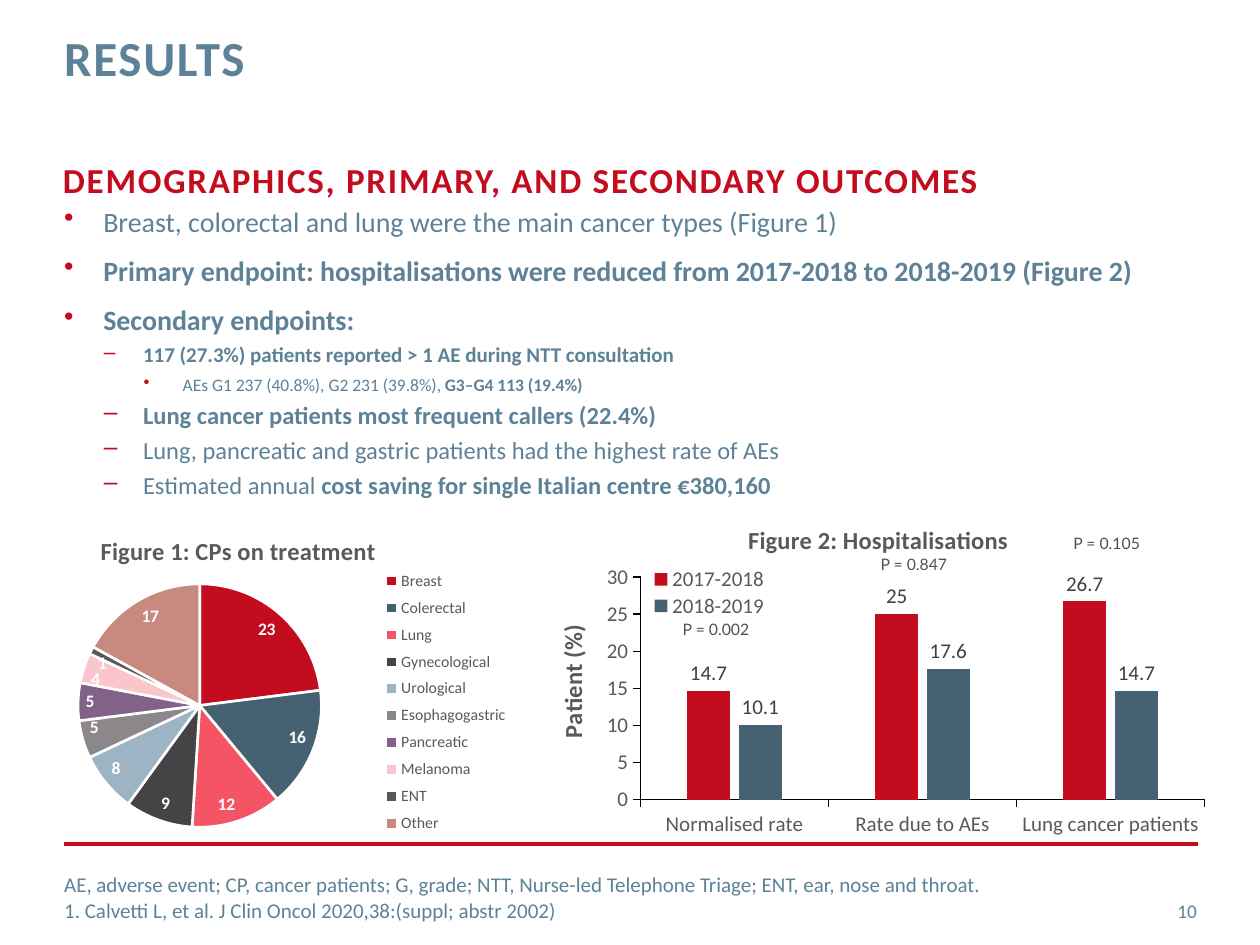
"""Build the results slide: outcome bullets above a pie chart and a column chart."""
from dataclasses import dataclass
from typing import Any, NamedTuple

from lxml.etree import SubElement
from pptx import Presentation
from pptx.chart.data import CategoryChartData
from pptx.dml.color import RGBColor
from pptx.enum.chart import XL_CHART_TYPE as ChartType, XL_LABEL_POSITION as LabelPosition
from pptx.enum.chart import XL_LEGEND_POSITION as LegendPosition, XL_TICK_MARK as TickMark
from pptx.enum.shapes import MSO_CONNECTOR as Connector
from pptx.enum.text import MSO_ANCHOR as Anchor, MSO_AUTO_SIZE as AutoSize, PP_ALIGN as Align
from pptx.oxml import parse_xml
from pptx.oxml.ns import nsdecls, qn
from pptx.util import Inches, Pt


@dataclass(frozen=True)
class Theme:
    red: str = "C30C1E"
    blue: str = "5D8298"
    slate: str = "466172"
    grey: str = "595959"
    label: str = "404040"
    note: str = "505050"
    white: str = "FFFFFF"
    black: str = "000000"
    font: str = "Calibri"
    note_font: str = "Lato"
    title: int = 28
    heading: int = 20
    body: int = 16
    figure: int = 14
    small: int = 12
    number: int = 11
    tiny: int = 10
    note_size: int = 9


class Box(NamedTuple):
    left: float
    top: float
    width: float
    height: float


class Bullet(NamedTuple):
    level: int
    size: int
    before: int
    plain: str = ""
    bold: str = ""


class Note(NamedTuple):
    text: str
    left: float
    top: float


THEME = Theme()
BULLETS = (
    Bullet(0, THEME.body, 0, "Breast, colorectal and lung were the main cancer types (Figure 1)"),
    Bullet(0, THEME.body, 9, bold="Primary endpoint: hospitalisations were reduced from 2017-2018 to 2018-2019 (Figure 2)"),
    Bullet(0, THEME.body, 9, bold="Secondary endpoints:"),
    Bullet(1, THEME.small, 3, bold="117 (27.3%) patients reported > 1 AE during NTT consultation"),
    Bullet(2, THEME.tiny, 4, "AEs G1 237 (40.8%), G2 231 (39.8%), ", "G3–G4 113 (19.4%)"),
    Bullet(1, THEME.figure, 3, bold="Lung cancer patients most frequent callers (22.4%)"),
    Bullet(1, THEME.figure, 3, "Lung, pancreatic and gastric patients had the highest rate of AEs"),
    Bullet(1, THEME.figure, 3, "Estimated annual ", "cost saving for single Italian centre €380,160"),
)
FOOTNOTES = (
    "AE, adverse event; CP, cancer patients; G, grade; NTT, Nurse-led Telephone Triage; ENT, ear, nose and throat.",
    "1. Calvetti L, et al. J Clin Oncol 2020,38:(suppl; abstr 2002)",
)
NOTES = (Note("P = 0.002", 5.32, 4.87), Note("P = 0.847", 6.89, 4.35), Note("P = 0.105", 8.42, 4.19))
CANCERS = {
    "Breast": (23, THEME.red), "Colerectal": (16, THEME.slate), "Lung": (12, "F45464"),
    "Gynecological": (9, "464346"), "Urological": (8, "9CB4C3"), "Esophagogastric": (5, "8B878B"),
    "Pancreatic": (5, "826288"), "Melanoma": (4, "FBC6CB"), "ENT": (1, THEME.grey), "Other": (17, "C88981"),
}
RATES = ("Normalised rate", "Rate due to AEs", "Lung cancer patients")
PERIODS = {"2017-2018": ((14.7, 25, 26.7), THEME.red), "2018-2019": ((10.1, 17.6, 14.7), THEME.slate)}
FRAME = dict(margin_left=0, margin_top=0, margin_right=0, margin_bottom=0, word_wrap=True, auto_size=AutoSize.NONE)
AXIS = dict(has_major_gridlines=False, major_tick_mark=TickMark.OUTSIDE, minor_tick_mark=TickMark.NONE)
SCALE = dict(minimum_scale=0, maximum_scale=30, major_unit=5, has_title=True)


def apply(target: Any, **values: Any) -> None:
    for name, value in values.items():
        setattr(target, name, value)


def paint(fill: Any, color: str) -> None:
    fill.solid()
    fill.fore_color.rgb = RGBColor.from_string(color)


def style(font: Any, size: int, color: str, bold: bool = False, name: str = THEME.font) -> None:
    apply(font, size=Pt(size), bold=bold, name=name)
    font.color.rgb = RGBColor.from_string(color)


def write(paragraph: Any, text: str, size: int, color: str, bold: bool = False,
          name: str = THEME.font, spacing: int = 0) -> None:
    run = paragraph.add_run()
    run.text = text
    style(run.font, size, color, bold, name)
    if spacing:
        run.font._element.set("spc", str(spacing * 100))


def add_text(slide: Any, box: Box, count: int = 1, anchor: Any = Anchor.TOP) -> Any:
    frame = slide.shapes.add_textbox(*map(Inches, box)).text_frame
    apply(frame, vertical_anchor=anchor, **FRAME)
    for _ in range(count - 1):
        frame.add_paragraph()
    return frame.paragraphs


def add_bullets(slide: Any, box: Box) -> None:
    for paragraph, bullet in zip(add_text(slide, box, len(BULLETS)), BULLETS):
        properties = paragraph._p.get_or_add_pPr()
        properties.set("marL", str(Inches(0.31 + 0.315 * bullet.level)))
        properties.set("indent", str(-Inches(0.31)))
        SubElement(SubElement(properties, qn("a:buClr")), qn("a:srgbClr"), val=THEME.red)
        SubElement(properties, qn("a:buChar"), char="•–•"[bullet.level])
        paragraph.space_before = Pt(bullet.before)
        for text, bold in ((bullet.plain, False), (bullet.bold, True)):
            if text:
                write(paragraph, text, bullet.size, THEME.blue, bold)


def place(element: Any, index: int, inner: bool = False, **position: float) -> None:
    for old in element.findall(qn("c:layout")):
        element.remove(old)
    layout = parse_xml(f"<c:layout {nsdecls('c')}><c:manualLayout/></c:layout>")
    target = {"layoutTarget": "inner"} if inner else {}
    for name, value in {**target, "xMode": "edge", "yMode": "edge", **position}.items():
        SubElement(layout[0], qn(f"c:{name}"), val=str(value))
    element.insert(index, layout)


def add_chart(slide: Any, kind: Any, categories: Any, values: dict[str, Any], box: Box, title: str,
              title_at: tuple[float, float], plot: Box, legend: Box, side: Any, legend_size: int) -> Any:
    data = CategoryChartData()
    data.categories = list(categories)
    for name, numbers in values.items():
        data.add_series(name, numbers)
    chart = slide.shapes.add_chart(kind, *map(Inches, box), data).chart
    style(chart.font, THEME.tiny, THEME.black)
    apply(chart, has_title=True, has_legend=True)
    write(chart.chart_title.text_frame.paragraphs[0], title, THEME.figure, THEME.grey, True)
    place(chart.chart_title._element, 1, x=title_at[0], y=title_at[1])
    apply(chart.legend, position=side, include_in_layout=False)
    style(chart.legend.font, legend_size, THEME.grey)
    place(chart.legend._element, 1, **dict(zip("xywh", legend)))
    place(chart._chartSpace.chart.plotArea, 0, True, **dict(zip("xywh", plot)))
    return chart


def label_values(labels: Any, position: Any, size: int, color: str, bold: bool = False) -> None:
    apply(labels, show_value=True, position=position)
    style(labels.font, size, color, bold)


def add_pie(slide: Any) -> None:
    chart = add_chart(slide, ChartType.PIE, CANCERS, {"Series 1": [value for value, _ in CANCERS.values()]},
                      Box(-0.25, 4.04, 4.83, 2.69), "Figure 1: CPs on treatment", (0.21, 0.06),
                      Box(0.18, 0.22, 0.4, 0.72), Box(0.66, 0.16, 0.25, 0.82), LegendPosition.RIGHT, THEME.note_size)
    series = chart.plots[0].series[0]
    for index, (_, color) in enumerate(CANCERS.values()):
        point = series.points[index].format
        paint(point.fill, color)
        paint(point.line.fill, THEME.white)
        point.line.width = Pt(1.5)
    label_values(series.data_labels, LabelPosition.INSIDE_END, THEME.tiny, THEME.white, True)


def add_columns(slide: Any) -> None:
    chart = add_chart(slide, ChartType.COLUMN_CLUSTERED, RATES, {name: period[0] for name, period in PERIODS.items()},
                      Box(4.21, 3.96, 5.46, 3.1), "Figure 2: Hospitalisations", (0.31, 0.05),
                      Box(0.16, 0.2, 0.82, 0.57), Box(0.16, 0.17, 0.2, 0.14), LegendPosition.BOTTOM, THEME.small)
    apply(chart.plots[0], gap_width=219, overlap=-21, vary_by_categories=False)
    for series, (_, color) in zip(chart.plots[0].series, PERIODS.values()):
        paint(series.format.fill, color)
        label_values(series.data_labels, LabelPosition.OUTSIDE_END, THEME.small, THEME.label)
    for axis in (chart.category_axis, chart.value_axis):
        apply(axis, **AXIS)
        style(axis.tick_labels.font, THEME.small, THEME.grey)
        paint(axis.format.line.fill, THEME.black)
        axis.format.line.width = Pt(0.75)
    apply(chart.value_axis, **SCALE)
    title = chart.value_axis.axis_title
    write(title.text_frame.paragraphs[0], "Patient (%)", THEME.figure, THEME.grey, True)
    title.text_frame._txBody.bodyPr.set("rot", "-5400000")
    place(title._element, 1, x=0.03, y=0.31)


def main() -> None:
    presentation = Presentation()
    apply(presentation, slide_width=Inches(10), slide_height=Inches(7.5))
    slide = presentation.slides.add_slide(presentation.slide_layouts[5])
    rule = slide.shapes.add_connector(Connector.STRAIGHT, *map(Inches, (0.51, 6.7, 9.51, 6.7)))
    paint(rule.line.fill, THEME.red)
    rule.line.width = Pt(2)
    SubElement(rule._element.spPr, qn("a:effectLst"))
    title = slide.shapes.title
    apply(title, left=Inches(0.51), top=Inches(0.27), width=Inches(7.17), height=Inches(0.88))
    apply(title.text_frame, vertical_anchor=Anchor.TOP, **FRAME)
    paragraph = title.text_frame.paragraphs[0]
    apply(paragraph, alignment=Align.LEFT, line_spacing=Pt(30))
    write(paragraph, "RESULTS", THEME.title, THEME.blue, True, spacing=1)
    heading = add_text(slide, Box(0.5, 1.26, 9, 0.77))[0]
    write(heading, "DEMOGRAPHICS, PRIMARY, AND SECONDARY OUTCOMES", THEME.heading, THEME.red, True, spacing=1)
    add_bullets(slide, Box(0.51, 1.62, 8.92, 2.52))
    add_columns(slide)
    add_pie(slide)
    for note in NOTES:
        frame = slide.shapes.add_textbox(*map(Inches, (note.left, note.top, 0.75, 0.29))).text_frame
        apply(frame, word_wrap=False, auto_size=AutoSize.SHAPE_TO_FIT_TEXT)
        write(frame.paragraphs[0], note.text, THEME.note_size, THEME.note, name=THEME.note_font)
    footer = add_text(slide, Box(0.51, 6.92, 8.33, 0.4), len(FOOTNOTES), Anchor.MIDDLE)
    for paragraph, text in zip(footer, FOOTNOTES):
        write(paragraph, text, THEME.small, THEME.blue)
    number = add_text(slide, Box(8.86, 7.03, 0.64, 0.4), anchor=Anchor.MIDDLE)[0]
    number.alignment = Align.RIGHT
    write(number, "10", THEME.number, THEME.blue)
    presentation.save("out.pptx")


if __name__ == "__main__":
    main()
